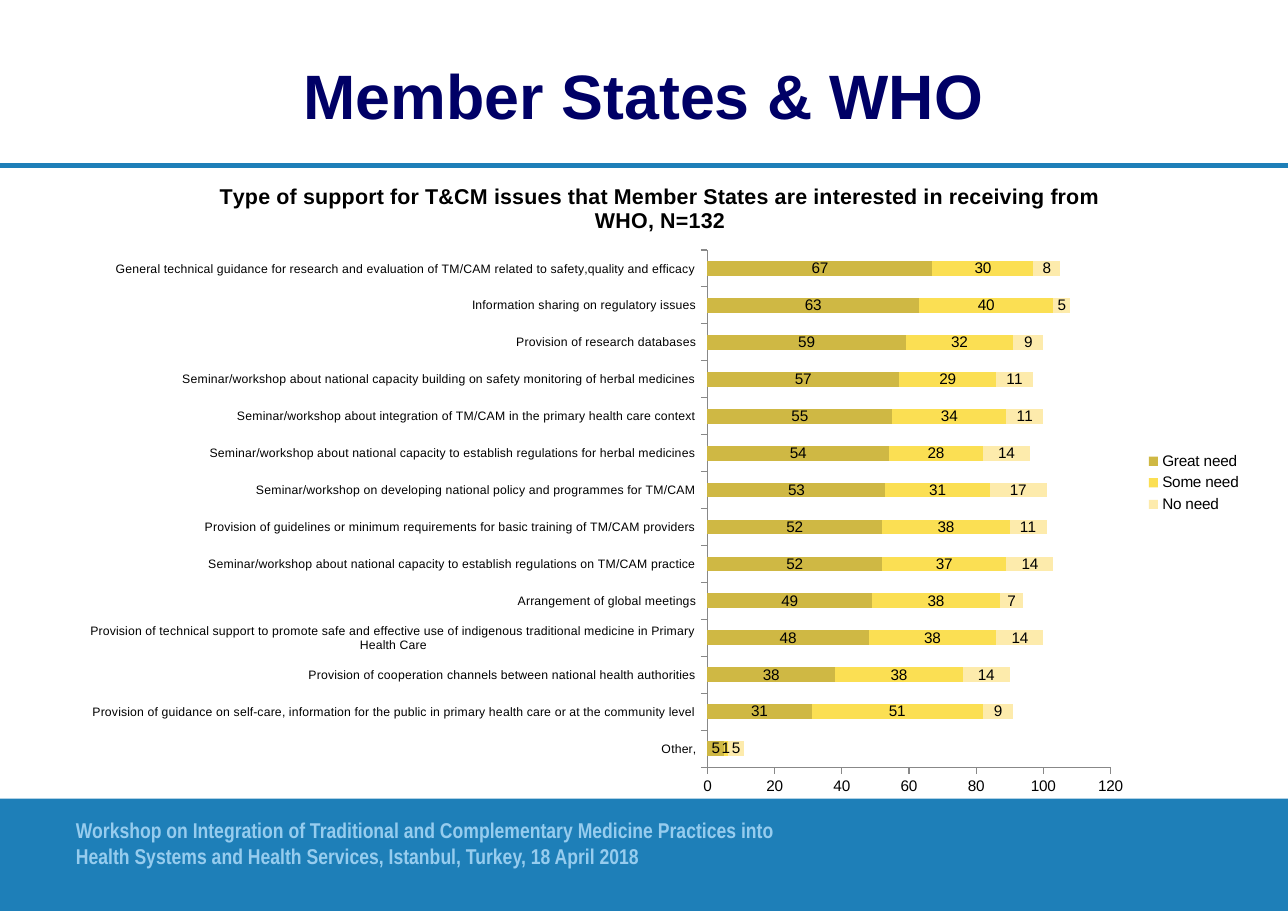
from typing import NamedTuple

import pptx
import pptx.chart.data
import pptx.dml.color
import pptx.enum.chart
import pptx.enum.shapes
import pptx.enum.text
import pptx.oxml
import pptx.oxml.ns
import pptx.util

Cm = pptx.util.Cm
Pt = pptx.util.Pt
XL = pptx.enum.chart
PP_ALIGN = pptx.enum.text.PP_ALIGN
ANCHOR = pptx.enum.text.MSO_ANCHOR

WIDTH, HEIGHT = 29.69, 21.01
BLUE, NAVY, PALE_BLUE, GREY, BLACK = "1E7FB8", "000066", "96CCEE", "888888", "000000"


class Level(NamedTuple):
    name: str
    color: str


class Support(NamedTuple):
    topic: str
    counts: tuple[int, int, int]


LEVELS = [
    Level("Great need", "CFB844"),
    Level("Some need", "FBDF53"),
    Level("No need", "FDEBAC"),
]

# Listed from the top bar down
SUPPORTS = [
    Support("General technical guidance for research and evaluation of TM/CAM related to "
            "safety,quality and efficacy", (67, 30, 8)),
    Support("Information sharing on regulatory issues", (63, 40, 5)),
    Support("Provision of research databases", (59, 32, 9)),
    Support("Seminar/workshop about national capacity building on safety monitoring of "
            "herbal medicines", (57, 29, 11)),
    Support("Seminar/workshop about integration of TM/CAM in the primary health care context",
            (55, 34, 11)),
    Support("Seminar/workshop about national capacity to establish regulations for "
            "herbal medicines", (54, 28, 14)),
    Support("Seminar/workshop on developing national policy and programmes for TM/CAM",
            (53, 31, 17)),
    Support("Provision of guidelines or minimum requirements for basic training of "
            "TM/CAM providers", (52, 38, 11)),
    Support("Seminar/workshop about national capacity to establish regulations on "
            "TM/CAM practice", (52, 37, 14)),
    Support("Arrangement of global meetings", (49, 38, 7)),
    Support("Provision of technical support to promote safe and effective use of indigenous "
            "traditional medicine in Primary Health Care", (48, 38, 14)),
    Support("Provision of cooperation channels between national health authorities",
            (38, 38, 14)),
    Support("Provision of guidance on self-care, information for the public in primary "
            "health care or at the community level", (31, 51, 9)),
    Support("Other,", (5, 1, 5)),
]


def rgb(color: str) -> pptx.dml.color.RGBColor:
    return pptx.dml.color.RGBColor.from_string(color)


def style_font(font, size: float, color: str = BLACK, name: str = "Arial",
               bold: bool = False) -> None:
    font.size, font.name, font.bold = Pt(size), name, bold
    font.color.rgb = rgb(color)


def write(tf, text: str, *, size: float, color: str = BLACK, name: str = "Arial",
          bold: bool = True, align=PP_ALIGN.LEFT):
    """Put one formatted run into a text frame and return it."""
    p = tf.paragraphs[0]
    p.alignment = align
    r = p.add_run()
    r.text = text
    style_font(r.font, size, color, name, bold)
    return r


def clear_margins(tf, anchor) -> None:
    tf.margin_left = tf.margin_top = tf.margin_right = tf.margin_bottom = 0
    tf.word_wrap = True
    tf.vertical_anchor = anchor


def append_xml(parent, xml: str, index: int | None = None) -> None:
    element = pptx.oxml.parse_xml(xml)
    parent.insert(len(parent) if index is None else index, element)


def add_rule(s, y: float) -> None:
    line = s.shapes.add_connector(pptx.enum.shapes.MSO_CONNECTOR.STRAIGHT,
                                  0, Cm(y), Cm(WIDTH), Cm(y))
    line.line.color.rgb = rgb(BLUE)
    line.line.width = Pt(3)
    append_xml(line._element.spPr, f"<a:effectLst {pptx.oxml.ns.nsdecls('a')}/>")


def add_footer(s) -> None:
    band = s.shapes.add_shape(pptx.enum.shapes.MSO_SHAPE.RECTANGLE,
                              0, Cm(18.42), Cm(WIDTH), Cm(2.59))
    band.shadow.inherit = False
    band.fill.solid()
    band.fill.fore_color.rgb = rgb(BLUE)
    band.line.fill.background()
    box = s.shapes.add_textbox(Cm(1.75), Cm(18.85), Cm(16.61), Cm(2.16))
    clear_margins(box.text_frame, ANCHOR.TOP)
    write(box.text_frame, "Workshop on Integration of Traditional and Complementary Medicine "
          "Practices into Health Systems and Health Services, Istanbul, Turkey, 18 April 2018",
          size=14, color=PALE_BLUE, name="Arial Narrow")


def add_title(s) -> None:
    sp = s.shapes.title
    sp.left, sp.top, sp.width, sp.height = Cm(1.47), Cm(0), Cm(26.75), Cm(4.34)
    clear_margins(sp.text_frame, ANCHOR.MIDDLE)
    r = write(sp.text_frame, "Member States & WHO", size=41, color=NAVY,
              align=PP_ALIGN.CENTER)
    # The shadow goes right after the text fill
    append_xml(r.font._element, f"""<a:effectLst {pptx.oxml.ns.nsdecls('a')}>
        <a:outerShdw dist="25400" dir="2700000"><a:srgbClr val="{PALE_BLUE}"/></a:outerShdw>
        </a:effectLst>""", 1)


def style_axis(axis, size: float) -> None:
    axis.has_major_gridlines = False
    axis.major_tick_mark = XL.XL_TICK_MARK.OUTSIDE
    axis.minor_tick_mark = XL.XL_TICK_MARK.NONE
    axis.format.line.color.rgb = rgb(GREY)
    axis.format.line.width = Pt(0.75)
    style_font(axis.tick_labels.font, size)


def place_plot(chart, x: float, y: float, w: float, h: float) -> None:
    """Fix the inner plot area as fractions of the chart."""
    area = chart._chartSpace.chart.plotArea
    for old in area.findall(pptx.oxml.ns.qn("c:layout")):
        area.remove(old)
    sizes = "".join(f'<c:{tag} val="{value}"/>' for tag, value in zip("xywh", (x, y, w, h)))
    append_xml(area, f"""<c:layout {pptx.oxml.ns.nsdecls('c')}><c:manualLayout>
        <c:layoutTarget val="inner"/><c:xMode val="edge"/><c:yMode val="edge"/>{sizes}
        </c:manualLayout></c:layout>""", 0)


def add_support_chart(s) -> None:
    rows = SUPPORTS[::-1]
    data = pptx.chart.data.CategoryChartData()
    data.categories = [row.topic for row in rows]
    for i, level in enumerate(LEVELS):
        data.add_series(level.name, [row.counts[i] for row in rows])
    chart = s.shapes.add_chart(XL.XL_CHART_TYPE.BAR_STACKED, Cm(1.55), Cm(3.68),
                               Cm(27.33), Cm(14.91), data).chart
    style_font(chart.font, 10)

    # Title and legend
    chart.has_title = True
    write(chart.chart_title.text_frame, "Type of support for T&CM issues that Member States "
          "are interested in receiving from WHO, N=132", size=14, align=PP_ALIGN.CENTER)
    chart.has_legend = True
    chart.legend.position = XL.XL_LEGEND_POSITION.RIGHT
    chart.legend.include_in_layout = False
    style_font(chart.legend.font, 10)

    # Axes
    style_axis(chart.category_axis, 8)
    style_axis(chart.value_axis, 10)
    chart.value_axis.minimum_scale = 0
    chart.value_axis.maximum_scale = 120
    chart.value_axis.major_unit = 20

    # Bars and their labels
    plot = chart.plots[0]
    plot.gap_width, plot.overlap, plot.vary_by_categories = 150, 100, False
    for series, level in zip(plot.series, LEVELS):
        series.format.fill.solid()
        series.format.fill.fore_color.rgb = rgb(level.color)
        labels = series.data_labels
        labels.show_value = True
        labels.position = XL.XL_LABEL_POSITION.CENTER
        style_font(labels.font, 10)
    place_plot(chart, 0.54, 0.14, 0.34, 0.8)


def main() -> None:
    prs = pptx.Presentation()
    prs.slide_width, prs.slide_height = Cm(WIDTH), Cm(HEIGHT)
    s = prs.slides.add_slide(prs.slide_layouts[5])
    add_rule(s, 3.81)
    add_footer(s)
    add_support_chart(s)
    add_title(s)
    prs.save("out.pptx")


if __name__ == "__main__":
    main()
